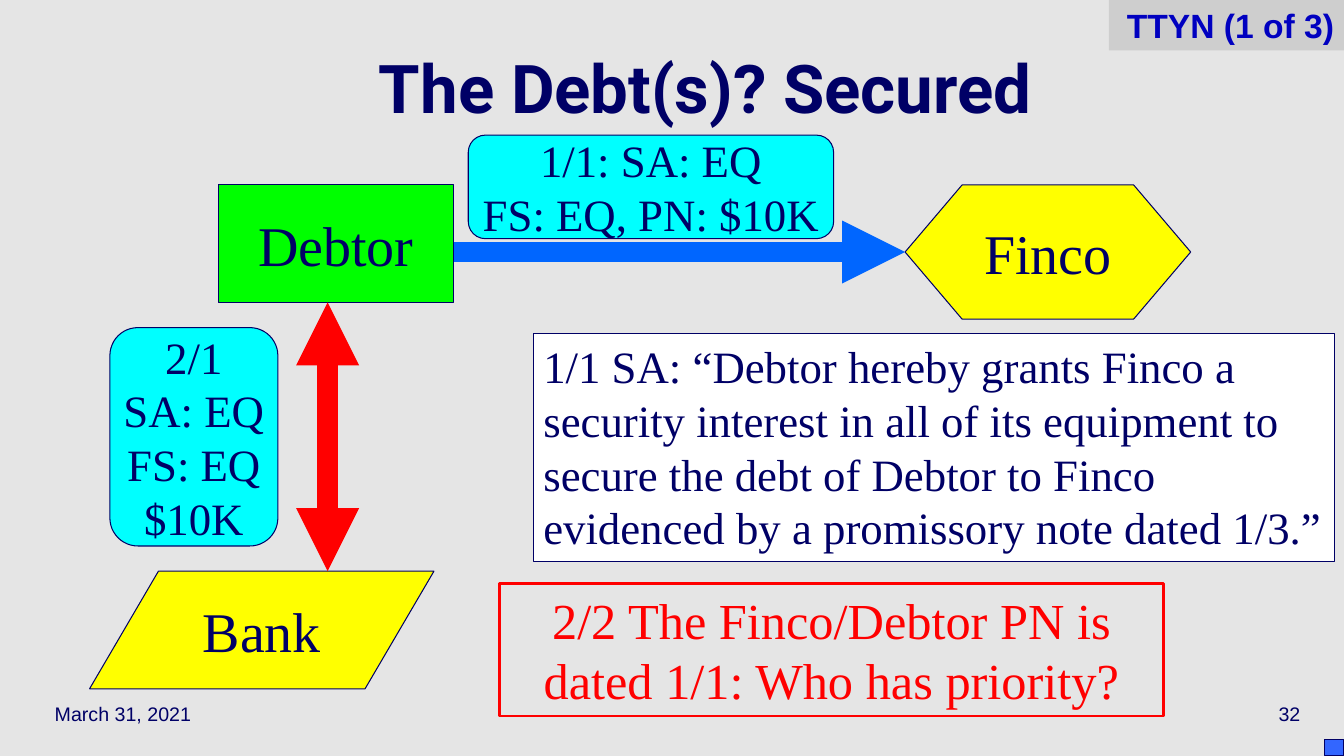
from dataclasses import dataclass
from typing import Optional

from lxml import etree
from pptx import Presentation
from pptx.dml.color import RGBColor
from pptx.enum.shapes import MSO_CONNECTOR, MSO_SHAPE
from pptx.enum.text import MSO_ANCHOR, PP_ALIGN
from pptx.oxml.ns import qn
from pptx.shapes.autoshape import Shape
from pptx.shapes.connector import Connector
from pptx.slide import Slide
from pptx.util import Pt

NAVY = RGBColor(0x00, 0x00, 0x66)
INK_BLUE = RGBColor(0x00, 0x00, 0xC0)
ARROW_BLUE = RGBColor(0x00, 0x66, 0xFF)
CORNER_BLUE = RGBColor(0x33, 0x66, 0xFF)
RED = RGBColor(0xFF, 0x00, 0x00)
YELLOW = RGBColor(0xFF, 0xFF, 0x00)
GREEN = RGBColor(0x00, 0xFF, 0x00)
CYAN = RGBColor(0x00, 0xFF, 0xFF)
WHITE = RGBColor(0xFF, 0xFF, 0xFF)
PALE_GREY = RGBColor(0xE5, 0xE5, 0xE5)
TAG_GREY = RGBColor(0xCE, 0xCE, 0xCE)

RECTANGLE = MSO_SHAPE.RECTANGLE
PARALLELOGRAM = MSO_SHAPE.FLOWCHART_DATA
PROCESS = MSO_SHAPE.FLOWCHART_PROCESS
HEXAGON = MSO_SHAPE.FLOWCHART_PREPARATION
ROUNDED = MSO_SHAPE.FLOWCHART_ALTERNATE_PROCESS
STRAIGHT = MSO_CONNECTOR.STRAIGHT
LEFT, CENTER, RIGHT = PP_ALIGN.LEFT, PP_ALIGN.CENTER, PP_ALIGN.RIGHT
TOP, MIDDLE = MSO_ANCHOR.TOP, MSO_ANCHOR.MIDDLE
LEFT_SIDE = 1
SERIF = "Times New Roman"


@dataclass(frozen=True)
class Area:
    left: float
    top: float
    width: float
    height: float


@dataclass(frozen=True)
class TextStyle:
    size: float
    font: str = SERIF
    color: RGBColor = NAVY
    bold: bool = False
    align: PP_ALIGN = CENTER
    anchor: MSO_ANCHOR = MIDDLE
    wrap: bool = True
    line_spacing: Optional[float] = None


@dataclass(frozen=True)
class Block:
    kind: MSO_SHAPE
    area: Area
    fill: Optional[RGBColor]
    line: Optional[RGBColor] = NAVY
    line_width: float = 0.75
    text: str = ""
    style: Optional[TextStyle] = None


@dataclass(frozen=True)
class Label:
    text: str
    area: Area
    style: TextStyle


PARTY = TextStyle(40, wrap=False)
TERMS = TextStyle(32, wrap=False)
QUOTE = TextStyle(32, align=LEFT, anchor=TOP)
QUESTION = TextStyle(36, color=RED, anchor=TOP)
TAG = TextStyle(24, "Arial", INK_BLUE, bold=True, align=RIGHT, anchor=TOP)
TITLE = TextStyle(48, "Roboto", bold=True, line_spacing=0.7)

LABELS = [
    Label("March 31, 2021", Area(32, 492, 200, 36), TextStyle(14, "Arial", align=LEFT)),
    Label("32", Area(736, 492, 200, 36), TextStyle(14, "Arial", align=RIGHT)),
    Label("The Debt(s)? Secured", Area(64, 24, 880, 90), TITLE),
]
BANK = Block(PARALLELOGRAM, Area(64, 408, 246, 84), YELLOW, text="Bank", style=PARTY)
DEBTOR = Block(PROCESS, Area(156, 132, 168, 84), GREEN, text="Debtor", style=PARTY)
FINCO = Block(HEXAGON, Area(646.5, 132, 204, 96), YELLOW, text="Finco", style=PARTY)
NOTES = [
    Block(RECTANGLE, Area(357, 417, 474, 94.5), None, RED, 2,
          "2/2 The Finco/Debtor PN is dated 1/1: Who has priority?", QUESTION),
    Block(ROUNDED, Area(78.5, 234, 120, 156), CYAN,
          text="2/1\nSA: EQ\nFS: EQ\n$10K", style=TERMS),
    Block(RECTANGLE, Area(946, 528, 14, 12), CORNER_BLUE),
    Block(RECTANGLE, Area(381, 238.5, 572, 162.5), WHITE,
          text="1/1 SA: “Debtor hereby grants Finco a security interest in all of its "
               "equipment to secure the debt of Debtor to Finco evidenced by a "
               "promissory note dated 1/3.”", style=QUOTE),
    Block(ROUNDED, Area(334.5, 96.5, 261, 74), CYAN,
          text="1/1: SA: EQ\nFS: EQ, PN: $10K", style=TERMS),
    Block(RECTANGLE, Area(792, 0, 168, 36), TAG_GREY, None,
          text="TTYN (1 of 3)", style=TAG),
]


def write_text(shape: Shape, text: str, style: TextStyle) -> None:
    frame = shape.text_frame
    frame.text = text
    frame.word_wrap = style.wrap
    frame.vertical_anchor = style.anchor
    for para in frame.paragraphs:
        para.alignment = style.align
        if style.line_spacing is not None:
            para.line_spacing = style.line_spacing
        for span in para.runs:
            span.font.name = style.font
            span.font.size = Pt(style.size)
            span.font.bold = style.bold
            span.font.color.rgb = style.color


def add_label(page: Slide, label: Label) -> None:
    area = label.area
    box = page.shapes.add_textbox(Pt(area.left), Pt(area.top), Pt(area.width), Pt(area.height))
    write_text(box, label.text, label.style)


def add_block(page: Slide, block: Block) -> Shape:
    area = block.area
    shape = page.shapes.add_shape(
        block.kind, Pt(area.left), Pt(area.top), Pt(area.width), Pt(area.height))
    shape.shadow.inherit = False
    if block.fill is None:
        shape.fill.background()
    else:
        shape.fill.solid()
        shape.fill.fore_color.rgb = block.fill
    if block.line is None:
        shape.line.fill.background()
    else:
        shape.line.color.rgb = block.line
        shape.line.width = Pt(block.line_width)
    if block.style is not None:
        write_text(shape, block.text, block.style)
    return shape


def add_arrow(page: Slide, start: tuple[float, float], end: tuple[float, float],
              color: RGBColor, both_ends: bool = False) -> Connector:
    arrow = page.shapes.add_connector(
        STRAIGHT, Pt(start[0]), Pt(start[1]), Pt(end[0]), Pt(end[1]))
    arrow.line.color.rgb = color
    arrow.line.width = Pt(15)
    outline = arrow.line._get_or_add_ln()
    for tag in ("a:headEnd", "a:tailEnd") if both_ends else ("a:tailEnd",):
        etree.SubElement(outline, qn(tag), type="triangle")
    etree.SubElement(arrow._element.spPr, qn("a:effectLst"))
    return arrow


def main() -> None:
    deck = Presentation()
    deck.slide_width, deck.slide_height = Pt(960), Pt(540)
    page = deck.slides.add_slide(deck.slide_layouts[6])
    page.background.fill.solid()
    page.background.fill.fore_color.rgb = PALE_GREY

    for label in LABELS:
        add_label(page, label)
    add_block(page, BANK)
    add_block(page, DEBTOR)
    finco = add_block(page, FINCO)
    loan_arrow = add_arrow(page, (324, 180), (646.5, 180), ARROW_BLUE)
    loan_arrow.end_connect(finco, LEFT_SIDE)
    add_arrow(page, (234, 216), (234, 408), RED, both_ends=True)
    for note in NOTES:
        add_block(page, note)

    deck.save("out.pptx")


if __name__ == "__main__":
    main()
